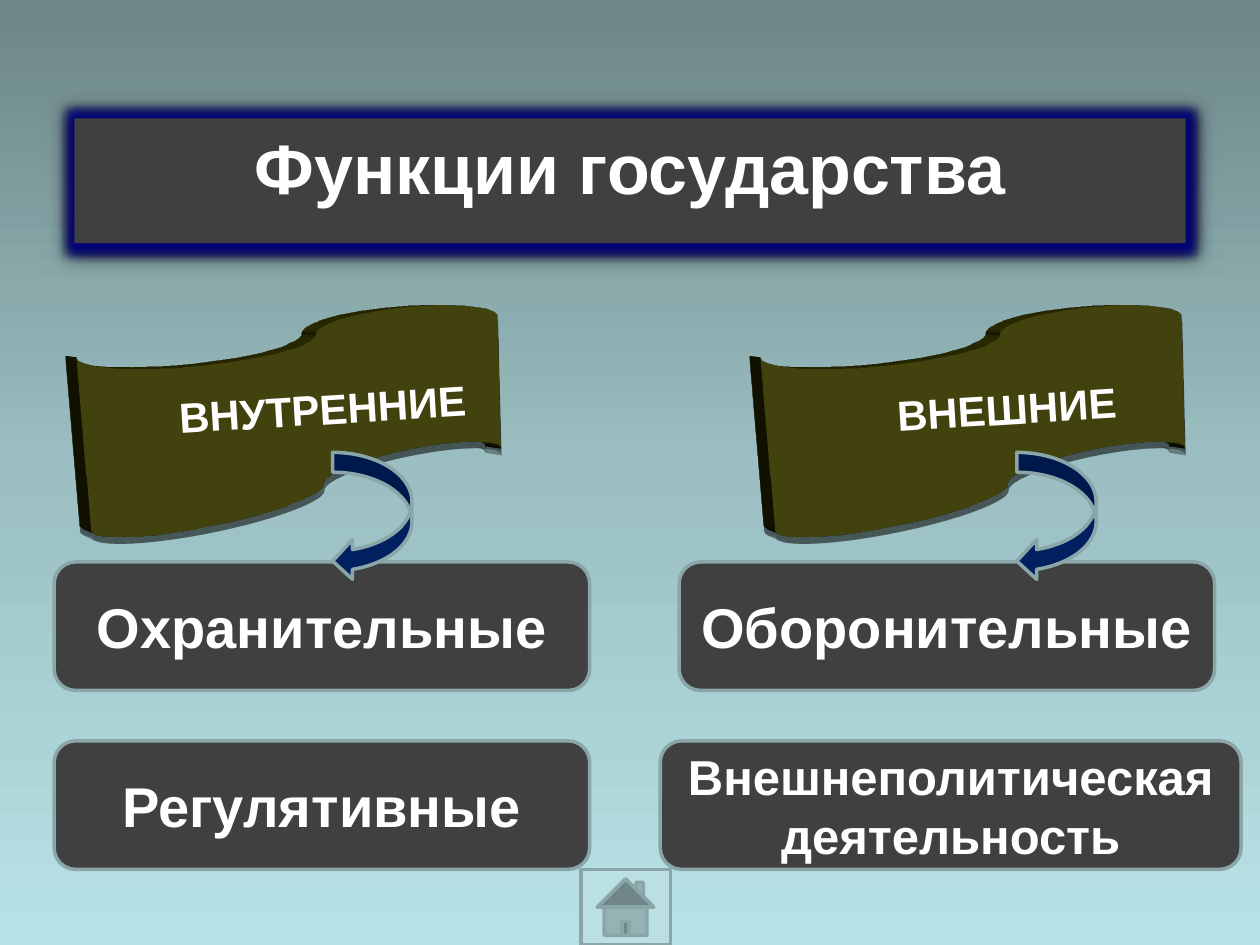
from pptx import Presentation
from pptx.dml.color import RGBColor
from pptx.enum.shapes import MSO_SHAPE as Preset
from pptx.enum.text import MSO_ANCHOR as Anchor, PP_ALIGN as Align
from pptx.oxml import parse_xml
from pptx.oxml.ns import nsdecls, qn
from pptx.util import Inches, Pt

COLORS = {
    "sky_top": "6D8688", "sky_middle": "9BBFC2", "sky_bottom": "B8E3E6",
    "panel": "404040", "ribbon": "333300", "arrow": "002060",
    "home": "BBE0E3", "outline": "8AA6A8", "text": "FFFFFF",
    "glow": "000080", "shadow": "000000",
}


def color(name):
    """Return the named colour."""
    return RGBColor.from_string(COLORS[name])


def xml(tag, content):
    """Build a drawing element from its opening tag and its content."""
    name = tag.split()[0]
    return parse_xml(f"<a:{tag} {nsdecls('a')}>{content}</a:{name}>")


def shade(name, opacity):
    """Return colour markup with an opacity in percent."""
    return f'<a:srgbClr val="{COLORS[name]}"><a:alpha val="{opacity * 1000}"/></a:srgbClr>'


def paint_background(page):
    """Fill the page with a vertical three-colour gradient."""
    fill = page.background.fill
    fill.gradient()
    fill.gradient_angle = 270
    stops = page.element.find(".//" + qn("a:gsLst"))
    for stop in list(stops):
        stops.remove(stop)
    for place, name in enumerate(("sky_top", "sky_middle", "sky_bottom")):
        stops.append(xml(f'gs pos="{place * 50000}"', shade(name, 100)))


def style(shape, fill, outlined=True):
    """Set the fill and outline and drop the inherited shadow."""
    shape.fill.solid()
    shape.fill.fore_color.rgb = color(fill)
    if outlined:
        shape.line.color.rgb = color("outline")
        shape.line.width = Pt(2)
    else:
        shape.line.fill.background()
    shape.shadow.inherit = False


def add_effect(shape, effect):
    """Append an effect to the effect list of a shape."""
    shape.element.spPr.find(qn("a:effectLst")).append(effect)


def drop_shadow(blur, distance, angle, opacity):
    """Build an outer shadow from points, degrees and percent."""
    return xml(f'outerShdw blurRad="{Pt(blur)}" dist="{Pt(distance)}" '
               f'dir="{angle * 60000}" rotWithShape="0"', shade("shadow", opacity))


def write(shape, text, size):
    """Write centred bold text in a shape."""
    frame = shape.text_frame
    frame.word_wrap = True
    frame.vertical_anchor = Anchor.MIDDLE
    para = frame.paragraphs[0]
    para.text = text
    para.alignment = Align.CENTER
    para.font.name = "Arial"
    para.font.size = Pt(size)
    para.font.bold = True
    para.font.color.rgb = color("text")


def add_preset(page, preset, left, top, width, height, fill, outlined=True):
    """Add a styled preset shape measured in inches."""
    shape = page.shapes.add_shape(
        preset, Inches(left), Inches(top), Inches(width), Inches(height))
    style(shape, fill, outlined)
    return shape


def set_title(page, text):
    """Format the title as a glowing dark panel."""
    title = page.shapes.title
    title.left, title.top = Inches(0.59), Inches(0.94)
    title.width, title.height = Inches(8.82), Inches(0.99)
    style(title, "panel", outlined=False)
    add_effect(title, xml(f'glow rad="{Pt(11)}"', shade("glow", 90)))
    add_effect(title, drop_shadow(8.5, 1, 90, 100))
    write(title, text, 40)
    title.text_frame.margin_bottom = Inches(0.28)


def add_ribbon(page, left, text):
    """Add a wavy ribbon extruded in perspective."""
    ribbon = add_preset(page, Preset.FLOWCHART_PUNCHED_TAPE,
                        left, 2.49, 3.94, 1.5, "ribbon", outlined=False)
    add_effect(ribbon, drop_shadow(17.8, 4, 87, 33))
    ribbon.element.spPr.append(xml(
        "scene3d", '<a:camera prst="perspectiveHeroicExtremeRightFacing"/>'
                   '<a:lightRig rig="threePt" dir="t"/>'))
    ribbon.element.spPr.append(xml(f'sp3d extrusionH="{Pt(15)}"', ""))
    write(ribbon, text, 24)


def add_panel(page, left, top, width, text, size):
    """Add a rounded panel naming one function."""
    panel = add_preset(page, Preset.ROUNDED_RECTANGLE, left, top, width, 1.02, "panel")
    write(panel, text, size)


def main():
    """Build and save the slide."""
    deck = Presentation()
    deck.slide_width, deck.slide_height = Inches(10), Inches(7.5)
    page = deck.slides.add_slide(deck.slide_layouts[5])
    paint_background(page)
    set_title(page, "Функции государства")

    for left, text in ((0.59, "ВНУТРЕННИЕ"), (6.02, "ВНЕШНИЕ")):
        add_ribbon(page, left, text)

    for panel in (
        (0.43, 4.46, 4.25, "Охранительные", 32),
        (0.43, 5.88, 4.25, "Регулятивные", 32),
        (5.24, 5.88, 4.61, "Внешнеполитическая деятельность", 28),
        (5.39, 4.46, 4.25, "Оборонительные", 32),
    ):
        add_panel(page, *panel)

    for left in (2.64, 8.07):
        add_preset(page, Preset.CURVED_LEFT_ARROW, left, 3.59, 0.63, 1.02, "arrow")
    add_preset(page, Preset.ACTION_BUTTON_HOME, 4.61, 6.9, 0.71, 0.6, "home")
    deck.save("out.pptx")


if __name__ == "__main__":
    main()
